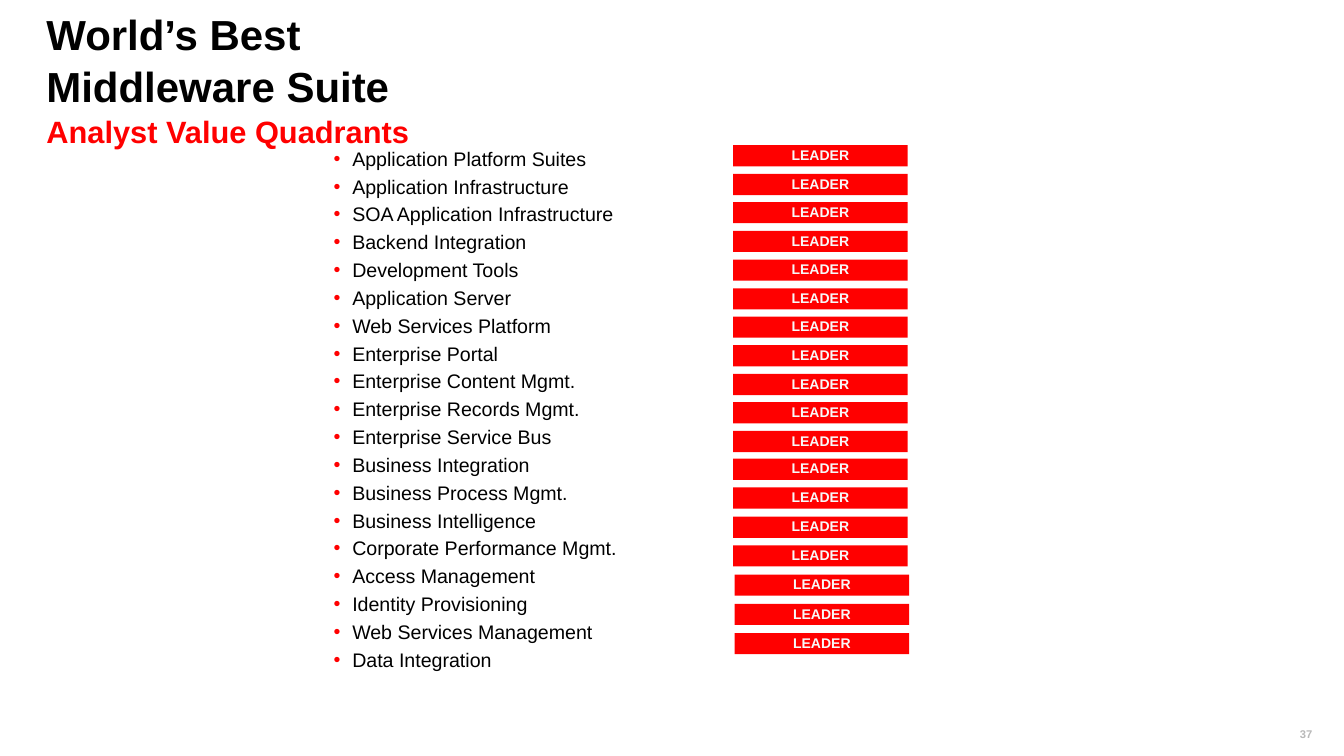
from lxml import etree
from pptx import Presentation
from pptx.dml.color import RGBColor
from pptx.enum.shapes import MSO_SHAPE
from pptx.enum.text import MSO_ANCHOR, PP_ALIGN
from pptx.oxml.ns import qn
from pptx.util import Pt

EMU_PER_PX = 9144  # 100 px to the inch
RECTANGLE = MSO_SHAPE.RECTANGLE
TOP, MIDDLE = MSO_ANCHOR.TOP, MSO_ANCHOR.MIDDLE
LEFT, CENTER, RIGHT = PP_ALIGN.LEFT, PP_ALIGN.CENTER, PP_ALIGN.RIGHT

FONT = "Arial"
BLACK = RGBColor(0x00, 0x00, 0x00)
RED = RGBColor(0xFF, 0x00, 0x00)
OFF_WHITE = RGBColor(0xF8, 0xF8, 0xF8)
GREY = RGBColor(0xB8, 0xB8, 0xB8)

CATEGORIES = [
    "Application Platform Suites",
    "Application Infrastructure",
    "SOA Application Infrastructure",
    "Backend Integration",
    "Development Tools",
    "Application Server",
    "Web Services Platform",
    "Enterprise Portal",
    "Enterprise Content Mgmt.",
    "Enterprise Records Mgmt.",
    "Enterprise Service Bus",
    "Business Integration",
    "Business Process Mgmt.",
    "Business Intelligence",
    "Corporate Performance Mgmt.",
    "Access Management",
    "Identity Provisioning",
    "Web Services Management",
    "Data Integration",
]

# left, first top, last top, number of badges
BADGE_GROUPS = [
    (1455, 288, 855, 11),
    (1455, 910, 1082, 4),
    (1458, 1140, 1256, 3),
]
BADGE_WIDTH, BADGE_HEIGHT = 346, 42
BULLET_INDENT = 37


def px(length):
    return round(length * EMU_PER_PX)


def write(paragraph, text, *, size, color, bold=False, align=LEFT, spacing=1.0):
    """Append a formatted run and set the layout of its paragraph."""
    paragraph.alignment = align
    paragraph.line_spacing = spacing
    run = paragraph.add_run()
    run.text = text
    run.font.name = FONT
    run.font.size = Pt(size)
    run.font.bold = bold
    run.font.color.rgb = color


def prepare_frame(frame, *, wrap=True, anchor=TOP):
    """Clear the insets, set wrapping and anchor, and return the first paragraph."""
    frame.margin_left = frame.margin_right = 0
    frame.margin_top = frame.margin_bottom = 0
    frame.word_wrap = wrap
    frame.vertical_anchor = anchor
    return frame.paragraphs[0]


def add_text_frame(slide, left, top, width, height):
    return slide.shapes.add_textbox(px(left), px(top), px(width), px(height)).text_frame


def add_bullet(paragraph):
    properties = paragraph._p.get_or_add_pPr()
    properties.set("marL", str(px(BULLET_INDENT)))
    properties.set("indent", str(-px(BULLET_INDENT)))
    bullet_color = etree.SubElement(properties, qn("a:buClr"))
    etree.SubElement(bullet_color, qn("a:srgbClr"), val=str(RED))
    etree.SubElement(properties, qn("a:buFont"), typeface=FONT)
    etree.SubElement(properties, qn("a:buChar"), char="•")


def add_title(slide):
    heading = prepare_frame(add_text_frame(slide, 92, 13, 829, 77))
    write(heading, "World’s Best Middleware Suite",
          size=60, color=BLACK, bold=True, spacing=1.04)
    heading.add_line_break()
    write(heading, "Analyst Value Quadrants",
          size=44, color=RED, bold=True, spacing=1.04)


def add_category_list(slide):
    frame = add_text_frame(slide, 662, 298, 728, 1039)
    paragraph = prepare_frame(frame)
    for index, category in enumerate(CATEGORIES):
        if index:
            paragraph = frame.add_paragraph()
        add_bullet(paragraph)
        if index:
            paragraph.space_before = Pt(11.2)
        write(paragraph, category, size=28, color=BLACK, spacing=0.85)


def add_badge(slide, left, top):
    badge = slide.shapes.add_shape(
        RECTANGLE, px(left), px(top), px(BADGE_WIDTH), px(BADGE_HEIGHT))
    badge.shadow.inherit = False
    badge.fill.solid()
    badge.fill.fore_color.rgb = RED
    badge.line.fill.background()
    label = prepare_frame(badge.text_frame, wrap=False, anchor=MIDDLE)
    write(label, "LEADER", size=20, color=OFF_WHITE, bold=True,
          align=CENTER, spacing=0.93)


def add_badges(slide):
    for left, first_top, last_top, count in BADGE_GROUPS:
        pitch = (last_top - first_top) / (count - 1)
        for index in range(count):
            add_badge(slide, left, round(first_top + index * pitch))


def add_page_number(slide):
    number = prepare_frame(add_text_frame(slide, 2424, 1447, 180, 24))
    write(number, "37", size=16, color=GREY, bold=True, align=RIGHT, spacing=0.9)


def main():
    presentation = Presentation()
    presentation.slide_width = px(2667)
    presentation.slide_height = px(1500)
    slide = presentation.slides.add_slide(presentation.slide_layouts[6])
    add_page_number(slide)
    add_title(slide)
    add_category_list(slide)
    add_badges(slide)
    presentation.save("out.pptx")


if __name__ == "__main__":
    main()
